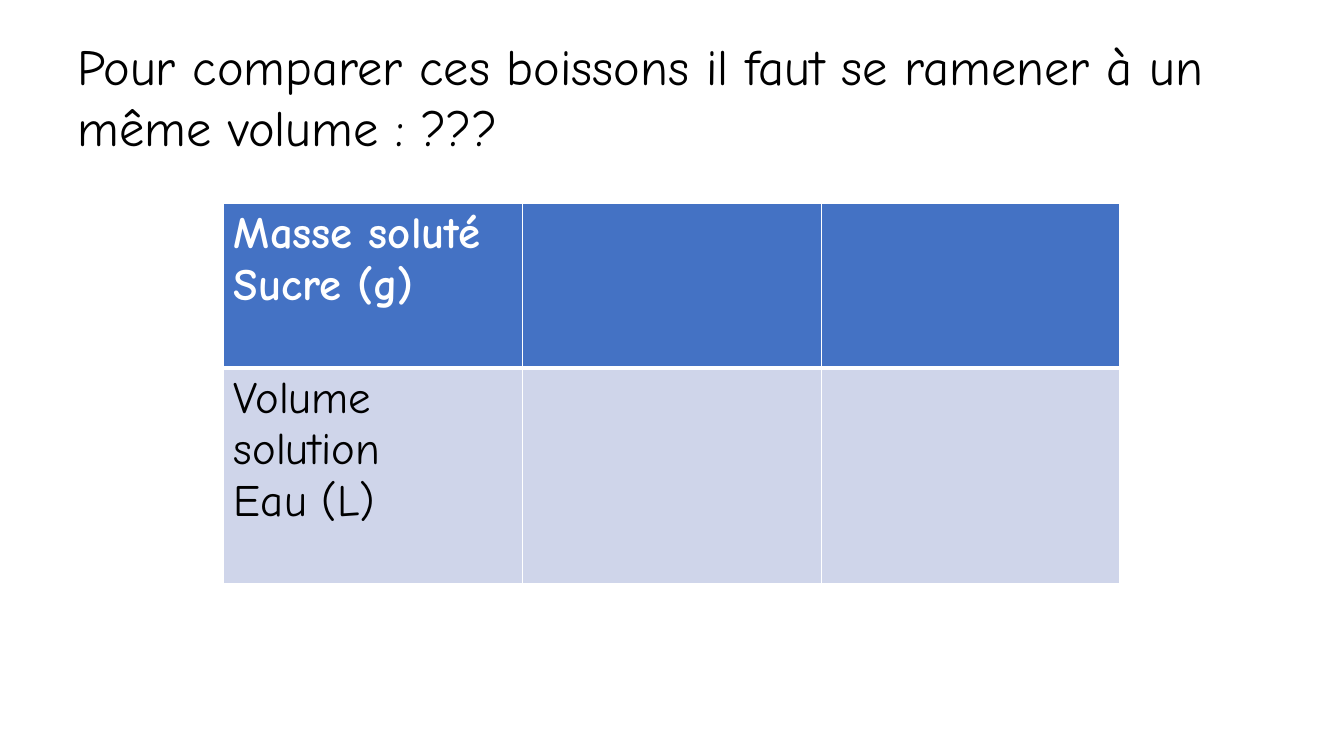
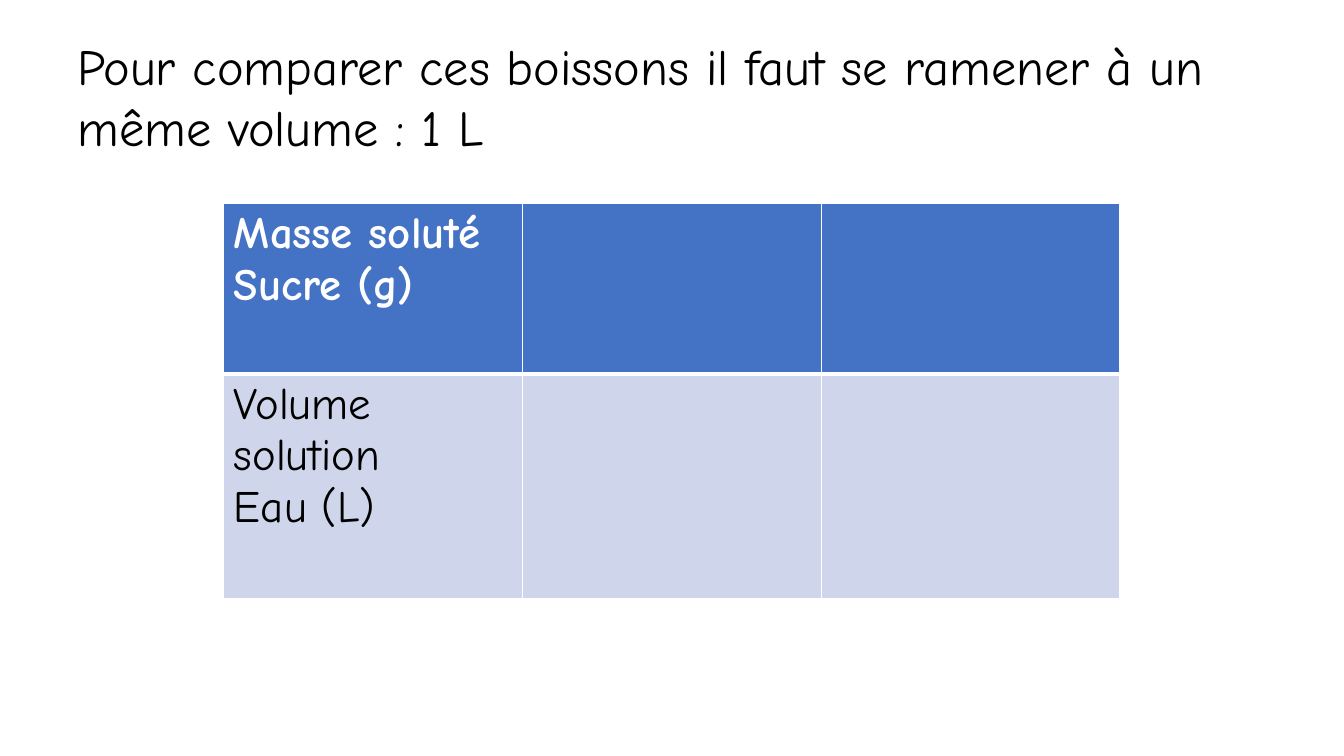
from lxml.etree import SubElement
from pptx import Presentation
from pptx.dml.color import RGBColor
from pptx.oxml.ns import qn
from pptx.util import Inches, Pt

FONT = "Comic Neue"
BLACK = "000000"
WHITE = "FFFFFF"
BLUE = "4472C4"
PALE_BLUE = "CFD5EA"
ROWS = [
    (["Masse soluté", "Sucre (g)"], BLUE, WHITE, True, 3),
    (["Volume solution", "Eau (L)"], PALE_BLUE, BLACK, False, 1),
]
PAGES = [("???", [1.63, 2.14]), ("1 L", [1.69, 2.23])]


def color(value):
    return RGBColor.from_string(value)


def write(frame, lines, size, text_color, bold=False):
    frame.text = "\n".join(lines)
    for para in frame.paragraphs:
        para.font.name = FONT
        para.font.size = Pt(size)
        para.font.bold = bold
        para.font.color.rgb = color(text_color)


deck = Presentation()
deck.slide_width = Inches(13.33)
deck.slide_height = Inches(7.5)

for volume, heights in PAGES:
    page = deck.slides.add_slide(deck.slide_layouts[6])

    table = page.shapes.add_table(
        2, 3, Inches(2.22), Inches(2.02), Inches(8.89), Inches(sum(heights))
    ).table
    for index, (label, fill, text_color, bold, bottom) in enumerate(ROWS):
        row = table.rows[index]
        row.height = Inches(heights[index])
        top = ROWS[index - 1][4] if index else 1
        for cell in row.cells:
            properties = cell._tc.get_or_add_tcPr()
            for side, width in (("L", 1), ("R", 1), ("T", top), ("B", bottom)):
                border = SubElement(properties, qn(f"a:ln{side}"), w=str(Pt(width)))
                paint = SubElement(border, qn("a:solidFill"))
                SubElement(paint, qn("a:srgbClr"), val=WHITE)
            cell.fill.solid()
            cell.fill.fore_color.rgb = color(fill)
        write(row.cells[0].text_frame, label, 32, text_color, bold)

    box = page.shapes.add_textbox(Inches(0.67), Inches(0.3), Inches(12.32), Inches(1.31))
    box.text_frame.word_wrap = True
    title = f"Pour comparer ces boissons il faut se ramener à un même volume : {volume}"
    write(box.text_frame, [title], 36, BLACK)

deck.save("out.pptx")
